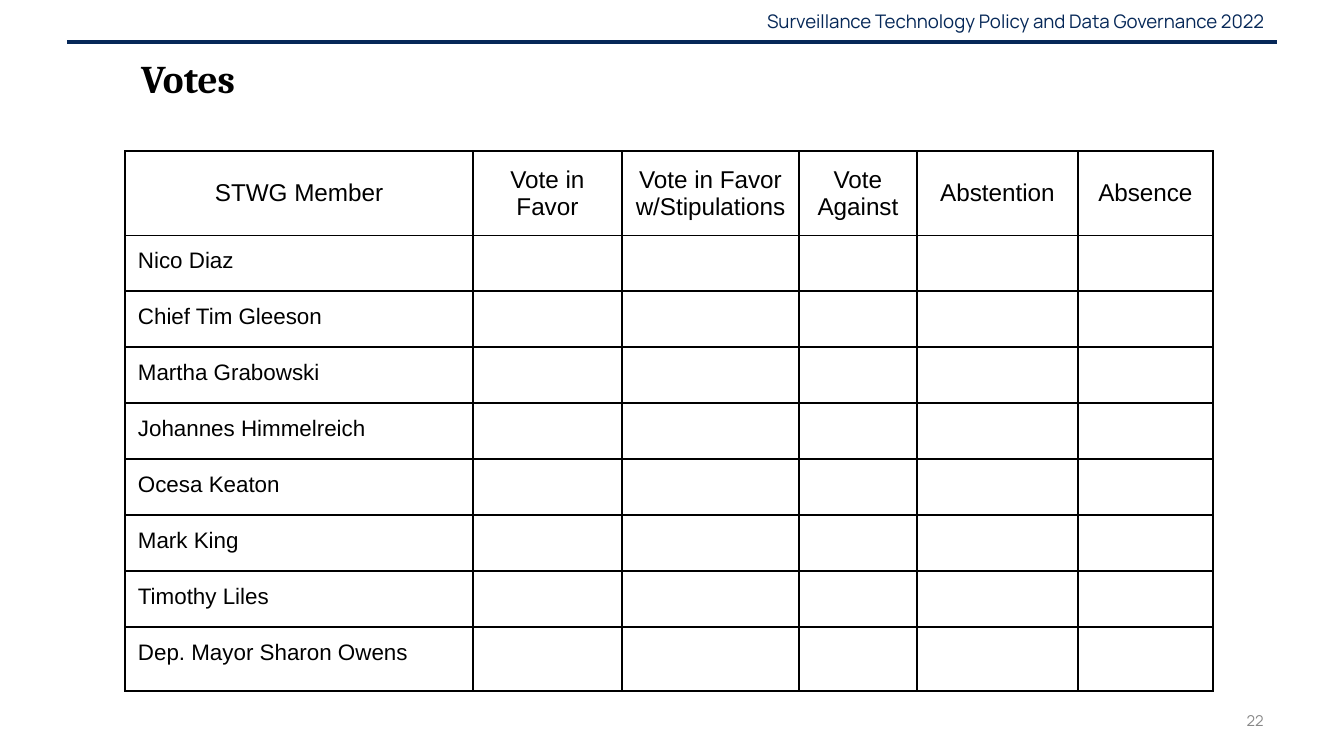
from lxml import etree
from pptx import Presentation
from pptx import util as u
from pptx.dml.color import RGBColor
from pptx.enum import shapes, text
from pptx.oxml.ns import qn

PX = 914400 / 134.4
NAVY = RGBColor(0x06, 0x28, 0x58)
GRAY = RGBColor(0x88, 0x88, 0x88)
BLACK = RGBColor(0, 0, 0)
LEFT, MID, RIGHT = text.PP_ALIGN.LEFT, text.PP_ALIGN.CENTER, text.PP_ALIGN.RIGHT
TOP, CENTER = text.MSO_ANCHOR.TOP, text.MSO_ANCHOR.MIDDLE


def px(*nums):
    return [u.Emu(round(n * PX)) for n in nums]


def style(para, font, size, color, align):
    para.alignment = align
    para.font.name = font
    para.font.size = u.Pt(size)
    para.font.color.rgb = color


prs = Presentation()
prs.slide_width, prs.slide_height = px(1344, 756)
slide = prs.slides.add_slide(prs.slide_layouts[6])

# Header, page number and title
for words, area, font, size, color, align, anchor in [
    ("Surveillance Technology Policy and Data Governance 2022",
     (700, 1, 577, 41), "Manrope", 10, NAVY, RIGHT, CENTER),
    ("22", (964, 700, 313, 41), "Manrope", 8, GRAY, RIGHT, CENTER),
    ("Votes", (128, 41, 193, 118), "Cambria", 21, BLACK, LEFT, TOP),
]:
    frame = slide.shapes.add_textbox(*px(*area)).text_frame
    frame.word_wrap = True
    frame.vertical_anchor = anchor
    frame.text = words
    para = frame.paragraphs[0]
    style(para, font, size, color, align)

# The title comes last in the list
para.font.bold = True
para.line_spacing = 1.15
para.space_before = u.Pt(12)

# Header rule
rule = slide.shapes.add_connector(shapes.MSO_CONNECTOR.STRAIGHT, *px(67, 42, 1277, 42))
rule.line.color.rgb = NAVY
rule.line.width = u.Pt(2.25)
etree.SubElement(rule._element.spPr, qn("a:effectLst"))

# Vote table
heads = ["STWG Member", "Vote in Favor", "Vote in Favor w/Stipulations",
         "Vote Against", "Abstention", "Absence"]
names = ["Nico Diaz", "Chief Tim Gleeson", "Martha Grabowski",
         "Johannes Himmelreich", "Ocesa Keaton", "Mark King",
         "Timothy Liles", "Dep. Mayor Sharon Owens"]
rows = [heads] + [[name] + [""] * (len(heads) - 1) for name in names]
widths = [348, 149, 177, 118, 161, 135]
heights = [81] + [56] * (len(names) - 1) + [64]
table = slide.shapes.add_table(
    len(rows), len(heads), *px(125, 151, sum(widths), sum(heights))).table
for col, width in zip(table.columns, px(*widths)):
    col.width = width
for row, height in zip(table.rows, px(*heights)):
    row.height = height

for r, row in enumerate(rows):
    for c, words in enumerate(row):
        cell = table.cell(r, c)
        cell.text = words
        cell.margin_left, cell.margin_right, cell.margin_top, cell.margin_bottom = px(13, 13, 13, 13)
        cell.vertical_anchor = TOP if r else CENTER
        style(cell.text_frame.paragraphs[0], "Arial", 12 if r else 13,
              BLACK, LEFT if r else MID)
        # Borders must stand before the fill
        props = cell._tc.get_or_add_tcPr()
        for side in ("lnL", "lnR", "lnT", "lnB"):
            edge = etree.SubElement(props, qn("a:" + side), w=str(u.Pt(1)))
            fill = etree.SubElement(edge, qn("a:solidFill"))
            etree.SubElement(fill, qn("a:srgbClr"), val=str(BLACK))
        cell.fill.background()

prs.save("out.pptx")
